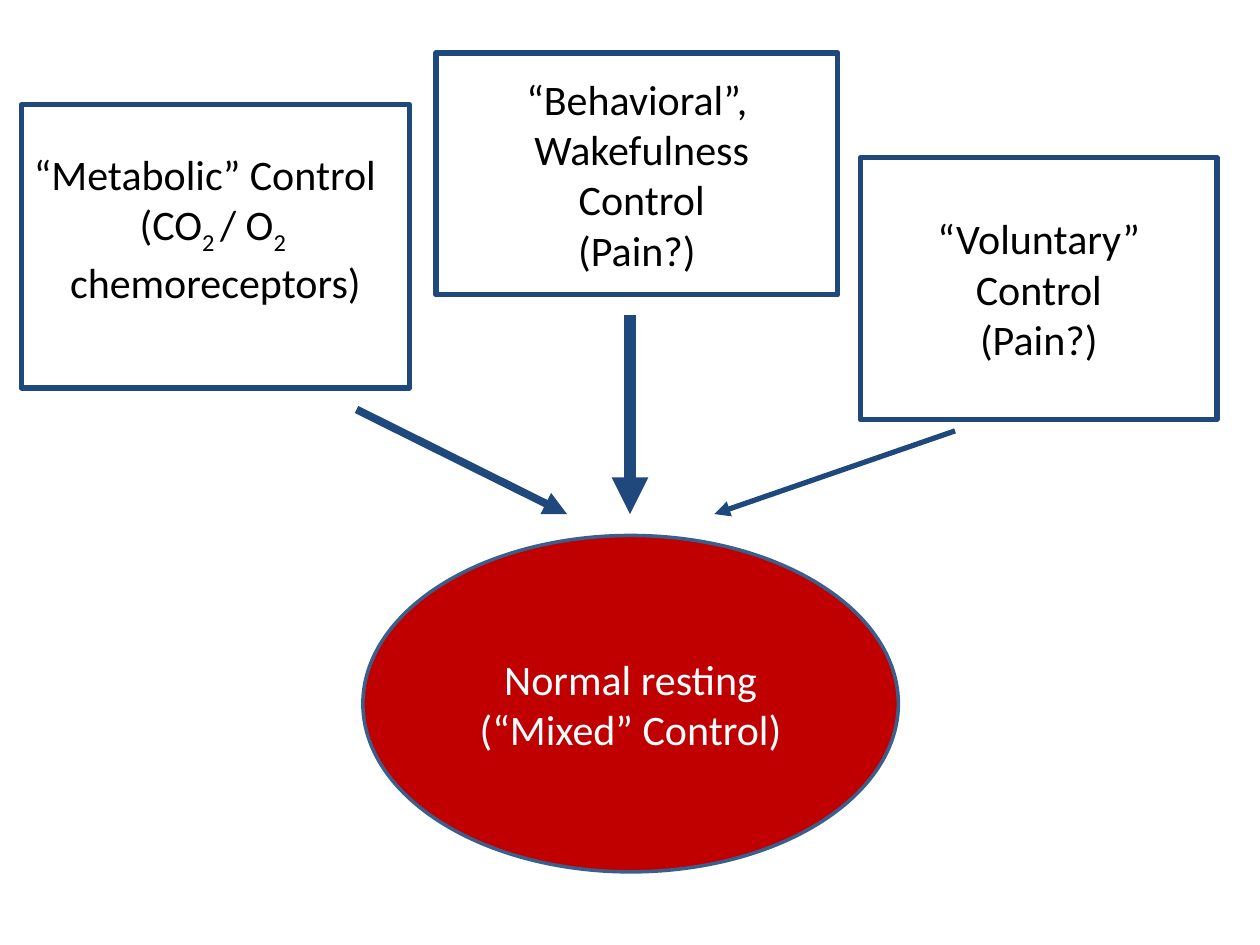
from lxml.etree import SubElement
from pptx import Presentation
from pptx.dml.color import RGBColor
from pptx.enum.shapes import MSO_CONNECTOR, MSO_SHAPE
from pptx.enum.text import MSO_ANCHOR, PP_ALIGN
from pptx.oxml.ns import qn
from pptx.util import Inches, Pt

COLORS = {"navy": "1F497D", "rim": "3A5F8C", "red": "C00000",
          "white": "FFFFFF", "black": "000000"}
FONT = {"name": "Calibri", "size": Pt(24)}
CENTER, LEFT = PP_ALIGN.CENTER, PP_ALIGN.LEFT
SUBSCRIPT = "-25000"

# Each paragraph is (alignment, pieces); every second piece is a subscript
METABOLIC = [(LEFT, ["“Metabolic” Control"]),
             (CENTER, ["(CO", "2 ", "/ O", "2 "]),
             (CENTER, ["chemoreceptors)"])]
BEHAVIORAL = [(CENTER, [line]) for line in
              ("“Behavioral”,", " Wakefulness", " Control", "(Pain?)")]
VOLUNTARY = [(CENTER, [line]) for line in ("“Voluntary”", "Control", "(Pain?)")]
RESTING = [(CENTER, ["Normal resting (“Mixed” Control)"])]

CONTROL_BOXES = [
    ((6.83, 1.25, 2.83, 2.08), VOLUNTARY, 0.05),
    ((0.17, 0.83, 3.08, 2.25), METABOLIC, 0.35),
    ((3.46, 0.42, 3.19, 1.92), BEHAVIORAL, 0.05),
]
ARROWS = [
    ((2.83, 3.25), (4.5, 4.08), 4.5),
    ((7.58, 3.42), (5.67, 4.08), 3),
    ((5, 2.5), (5, 4.08), 7),
]


def rgb(name):
    return RGBColor.from_string(COLORS[name])


def style_line(line, color, width):
    line.color.rgb = rgb(color)
    line.width = Pt(width)


def write_text(frame, paragraphs, color, frame_format):
    for key, value in frame_format.items():
        setattr(frame, key, value)
    for index, (alignment, pieces) in enumerate(paragraphs):
        para = frame.add_paragraph() if index else frame.paragraphs[0]
        para.alignment = alignment
        for position, piece in enumerate(pieces):
            span = para.add_run()
            span.text = piece
            for key, value in FONT.items():
                setattr(span.font, key, value)
            span.font.color.rgb = rgb(color)
            if position % 2:
                span._r.get_or_add_rPr().set("baseline", SUBSCRIPT)


def add_panel(page, kind, box, fill, line, width):
    panel = page.shapes.add_shape(kind, *map(Inches, box))
    panel.shadow.inherit = False
    panel.fill.solid()
    panel.fill.fore_color.rgb = rgb(fill)
    style_line(panel.line, line, width)
    return panel


def add_control_box(page, box, paragraphs, bottom_inset):
    panel = add_panel(page, MSO_SHAPE.RECTANGLE, box, "white", "navy", 3)
    write_text(panel.text_frame, paragraphs, "black",
               {"word_wrap": False, "vertical_anchor": MSO_ANCHOR.MIDDLE,
                "margin_bottom": Inches(bottom_inset)})


def add_arrow(page, start, end, width):
    arrow = page.shapes.add_connector(MSO_CONNECTOR.STRAIGHT,
                                      *map(Inches, start + end))
    style_line(arrow.line, "navy", width)
    SubElement(arrow.line._get_or_add_ln(), qn("a:tailEnd"), type="triangle")
    SubElement(arrow._element.spPr, qn("a:effectLst"))


def add_resting_oval(page, box):
    oval = add_panel(page, MSO_SHAPE.OVAL, box, "red", "rim", 2)
    write_text(oval.text_frame, RESTING, "white",
               {"word_wrap": True, "vertical_anchor": MSO_ANCHOR.MIDDLE})


def main():
    deck = Presentation()
    deck.slide_width, deck.slide_height = Inches(10), Inches(7.5)
    page = deck.slides.add_slide(deck.slide_layouts[6])

    # Three sources of control
    for control in CONTROL_BOXES:
        add_control_box(page, *control)

    # Thicker arrows mark stronger influence
    for arrow in ARROWS:
        add_arrow(page, *arrow)

    # Combined result
    add_resting_oval(page, (2.88, 4.25, 4.25, 2.67))

    deck.save("out.pptx")


if __name__ == "__main__":
    main()
